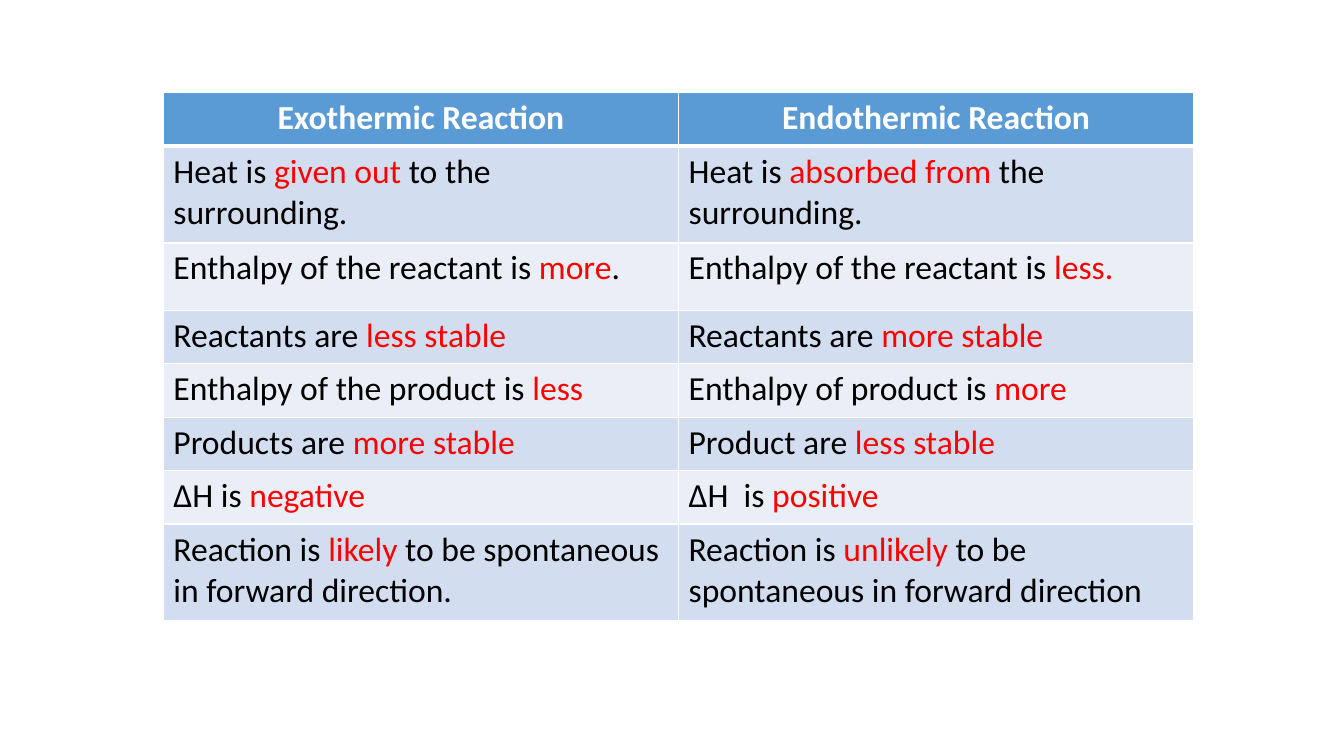
from lxml import etree
from pptx import Presentation
from pptx import util as u
from pptx.dml.color import RGBColor
from pptx.enum import text
from pptx.oxml import ns

WHITE = RGBColor(0xFF, 0xFF, 0xFF)
BLACK = RGBColor(0x00, 0x00, 0x00)
RED = RGBColor(0xFF, 0x00, 0x00)
HEADER_BLUE = RGBColor(0x5B, 0x9B, 0xD5)
BANDS = (RGBColor(0xD2, 0xDE, 0xEF), RGBColor(0xEA, 0xEF, 0xF7))

# Asterisks enclose the words shown in red
HEADINGS = ("Exothermic Reaction", "Endothermic Reaction")
COMPARISONS = [
    ("Heat is *given out *to the surrounding.",
     "Heat is *absorbed from *the surrounding."),
    ("Enthalpy of the reactant is *more*.", "Enthalpy of the reactant is *less.*"),
    ("Reactants are *less stable*", "Reactants are *more stable*"),
    ("Enthalpy of the product is *less*", "Enthalpy of product is *more*"),
    ("Products are *more stable*", "Product are *less stable*"),
    ("∆H is *negative*", "∆H  is *positive*"),
    ("Reaction is *likely* to be spontaneous in forward direction.",
     "Reaction is *unlikely* to be spontaneous in forward direction"),
]
ROW_HEIGHTS = (0.53, 0.96, 0.67, 0.53, 0.53, 0.53, 0.53, 0.96)
COLUMN_WIDTH = 5.11


class ReactionSlide:
    """Holds the text style and the slide being built."""

    def __init__(self, slide):
        self.slide = slide
        self.style = {"name": "Calibri", "size": u.Pt(24)}

    def add_borders(self, cell, top, bottom):
        properties = cell._tc.get_or_add_tcPr()
        widths = {"lnL": 1, "lnR": 1, "lnT": top, "lnB": bottom}
        for position, (side, points) in enumerate(widths.items()):
            line = etree.Element(ns.qn(f"a:{side}"), w=str(u.Pt(points)))
            fill = etree.SubElement(line, ns.qn("a:solidFill"))
            etree.SubElement(fill, ns.qn("a:srgbClr"), val=str(WHITE))
            properties.insert(position, line)

    def add_runs(self, paragraph, wording, color, bold):
        for index, part in enumerate(wording.split("*")):
            if not part:
                continue
            run = paragraph.add_run()
            run.text = part
            for name, value in {**self.style, "bold": bold}.items():
                setattr(run.font, name, value)
            run.font.color.rgb = RED if index % 2 else color

    def add_table(self, left, top, rows):
        frame = self.slide.shapes.add_table(
            len(rows), len(rows[0]), u.Inches(left), u.Inches(top),
            u.Inches(COLUMN_WIDTH * len(rows[0])), u.Inches(sum(ROW_HEIGHTS)))
        table = frame.table
        table.horz_banding = False
        for column in table.columns:
            column.width = u.Inches(COLUMN_WIDTH)
        for r, wordings in enumerate(rows):
            table.rows[r].height = u.Inches(ROW_HEIGHTS[r])
            header = r == 0
            for c, wording in enumerate(wordings):
                cell = table.cell(r, c)
                cell.fill.solid()
                cell.fill.fore_color.rgb = HEADER_BLUE if header else BANDS[(r - 1) % 2]
                # A thick rule separates the headings from the body
                self.add_borders(cell, 3 if r == 1 else 1, 3 if header else 1)
                paragraph = cell.text_frame.paragraphs[0]
                paragraph.alignment = text.PP_ALIGN.CENTER if header else text.PP_ALIGN.LEFT
                self.add_runs(paragraph, wording, WHITE if header else BLACK, header)


def main():
    presentation = Presentation()
    presentation.slide_width = u.Inches(13.33)
    presentation.slide_height = u.Inches(7.5)
    slide = presentation.slides.add_slide(presentation.slide_layouts[6])

    # Comparison table
    ReactionSlide(slide).add_table(1.62, 0.92, [HEADINGS, *COMPARISONS])

    presentation.save("out.pptx")


if __name__ == "__main__":
    main()
